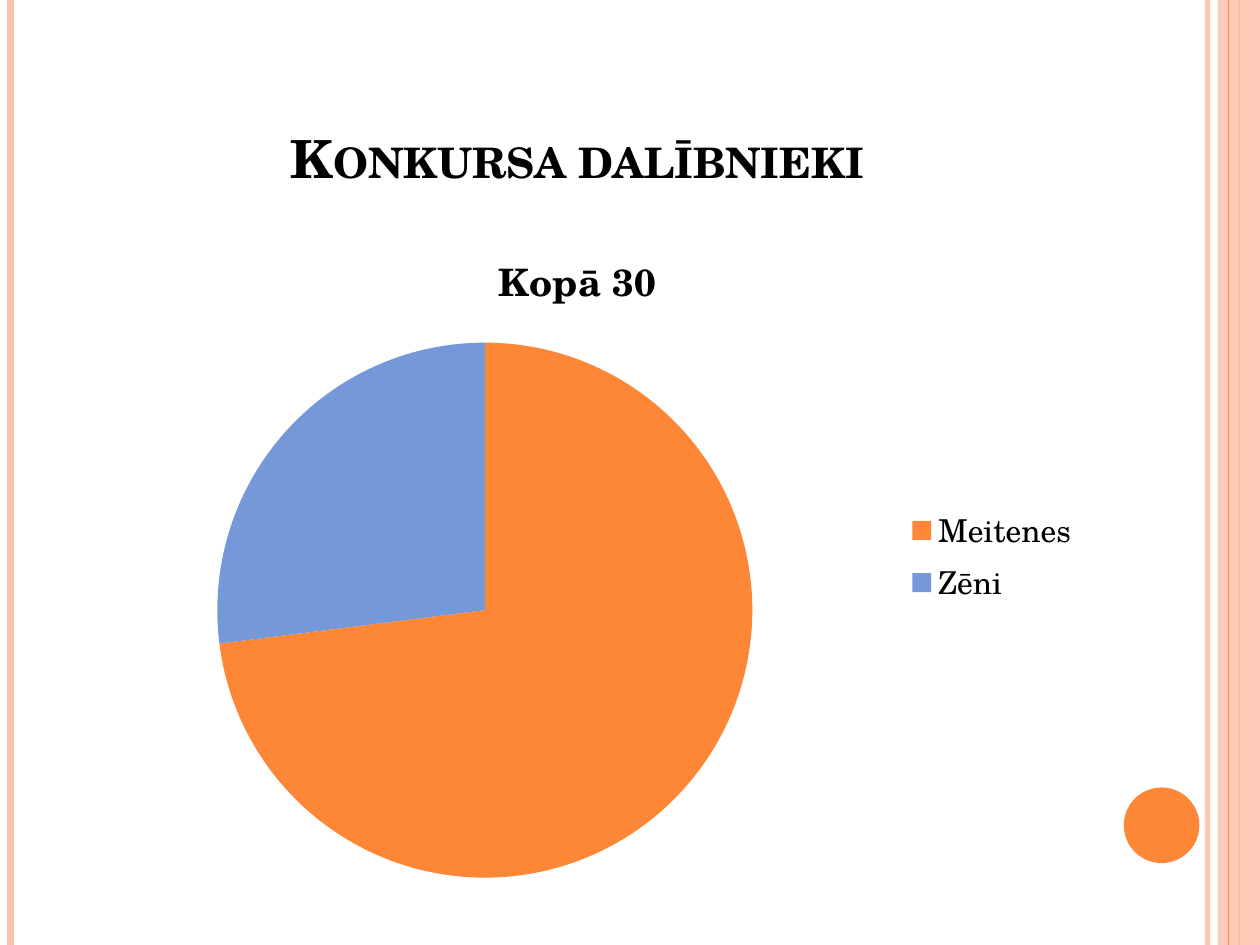
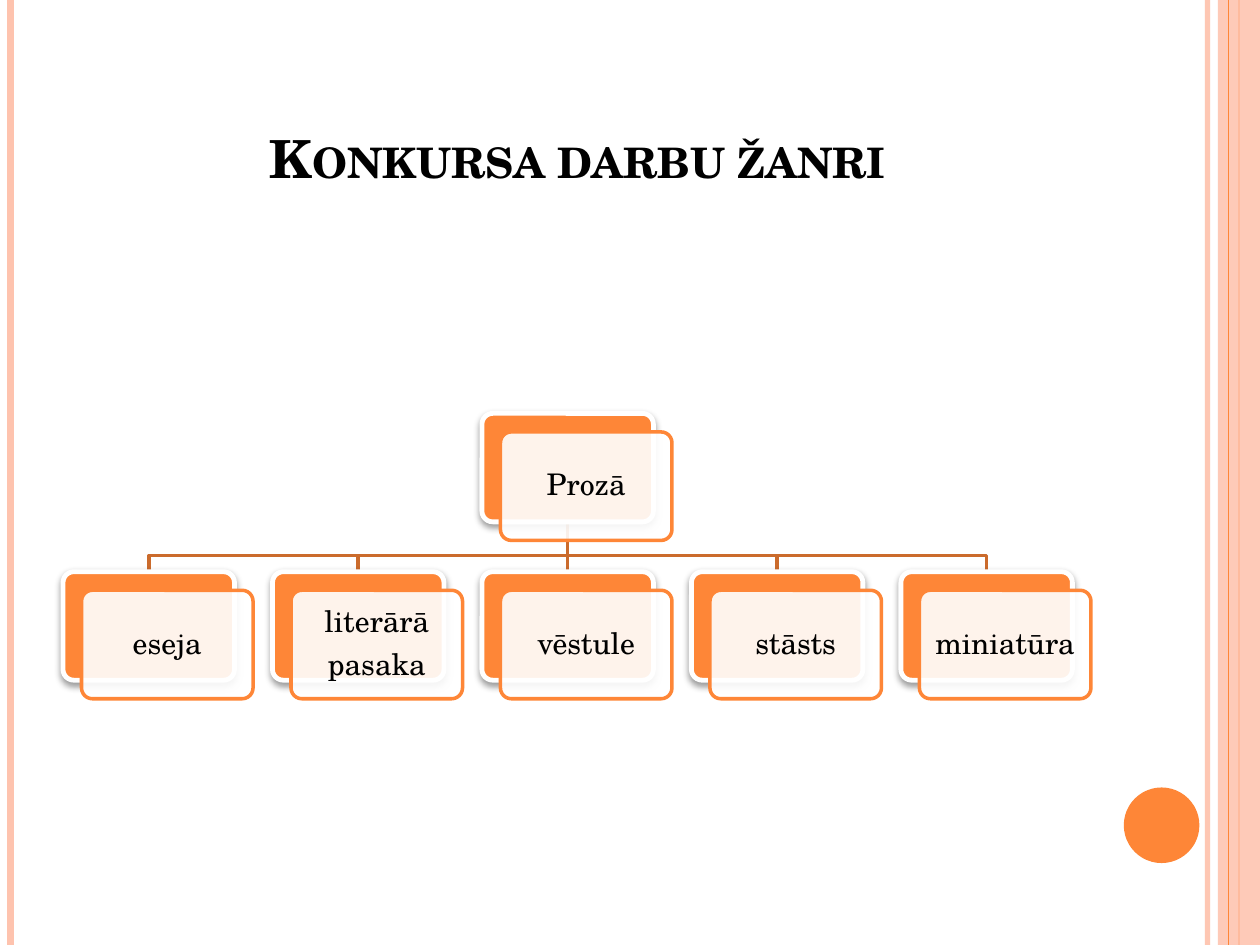
from typing import NamedTuple

from lxml import etree
from pptx import Presentation
from pptx.chart.data import CategoryChartData
from pptx.dml.color import RGBColor
from pptx.enum.chart import XL_CHART_TYPE as ChartType, XL_LEGEND_POSITION as LegendPosition
from pptx.enum.shapes import MSO_CONNECTOR as Connector, MSO_SHAPE as Shape
from pptx.enum.text import MSO_ANCHOR as Anchor, MSO_AUTO_SIZE as AutoSize, PP_ALIGN as Align
from pptx.oxml import parse_xml
from pptx.oxml.ns import nsdecls, qn
from pptx.util import Pt

FONT = "TeX Gyre Schola"
COLORS = {
    "black": "000000",
    "white": "FFFFFF",
    "orange": "FE8637",
    "peach": "FEC3AE",
    "blue": "7598D9",
    "branch": "CB6B2C",
}
SLIDE_WIDTH, SLIDE_HEIGHT = 720, 540
TITLE_ONLY = 5
CONTENT_LEFT, CONTENT_WIDTH = 36, 588


class Stripe(NamedTuple):
    x: float
    color: str
    weight: float
    opacity: int = 100


STRIPES_BEHIND = [
    Stripe(690, "peach", 3, 93),
    Stripe(6, "peach", 4.5),
    Stripe(708, "orange", 1.5),
]
STRIPE_ON_BAND = Stripe(702, "orange", 0.75)


class Card(NamedTuple):
    text: str
    left: float
    top: float

    @property
    def center(self) -> float:
        return self.left + CARD_WIDTH / 2


CARD_WIDTH, CARD_HEIGHT = 98, 62
CARD_STEP = 119.7
FRONT_SHIFT = 10.6
ROOT_TOP, GENRE_TOP = 236.2, 326.7
BRANCH_Y = 317.5
GENRES = ["eseja", "literārā\npasaka", "vēstule", "stāsts", "miniatūra"]


def rgb(name: str) -> RGBColor:
    return RGBColor.from_string(COLORS[name])


def set_opacity(shape, percent: int) -> None:
    """Apply opacity to the first solid colour of a shape or line."""
    color = shape._element.spPr.find(".//" + qn("a:srgbClr"))
    etree.SubElement(color, qn("a:alpha"), val=str(percent * 1000))


def write(frame, text: str, *, size: float, bold: bool = False, small_caps: bool = False,
          anchor=Anchor.MIDDLE, line_spacing: float | None = None,
          space_after: float = 0, inset: float | None = None) -> None:
    frame.word_wrap = True
    frame.auto_size = AutoSize.NONE
    frame.vertical_anchor = anchor
    if inset is not None:
        frame.margin_left = frame.margin_right = Pt(inset)
        frame.margin_top = frame.margin_bottom = Pt(inset)
    frame.text = text
    for paragraph in frame.paragraphs:
        paragraph.alignment = Align.CENTER
        paragraph.space_after = Pt(space_after)
        if line_spacing:
            paragraph.line_spacing = line_spacing
        for run in paragraph.runs:
            run.font.name = FONT
            run.font.size = Pt(size)
            run.font.bold = bold
            run.font.color.rgb = rgb("black")
            if small_caps:
                run._r.get_or_add_rPr().set("cap", "small")


def add_line(slide, start: tuple, end: tuple, color: str, weight: float):
    line = slide.shapes.add_connector(Connector.STRAIGHT, *map(Pt, start + end))
    line.line.color.rgb = rgb(color)
    line.line.width = Pt(weight)
    etree.SubElement(line._element.spPr, qn("a:effectLst"))
    return line


def add_stripe(slide, stripe: Stripe) -> None:
    line = add_line(slide, (stripe.x, 0), (stripe.x, SLIDE_HEIGHT), stripe.color, stripe.weight)
    if stripe.opacity < 100:
        set_opacity(line, stripe.opacity)


def add_filled(slide, kind, left: float, top: float, width: float, height: float,
               fill: str, outline: str | None = None, weight: float = 0):
    shape = slide.shapes.add_shape(kind, *map(Pt, (left, top, width, height)))
    shape.shadow.inherit = False
    shape.fill.solid()
    shape.fill.fore_color.rgb = rgb(fill)
    if outline:
        shape.line.color.rgb = rgb(outline)
        shape.line.width = Pt(weight)
    else:
        shape.line.fill.background()
    return shape


def add_titled_slide(deck, heading: str):
    slide = deck.slides.add_slide(deck.slide_layouts[TITLE_ONLY])
    for stripe in STRIPES_BEHIND:
        add_stripe(slide, stripe)
    band = add_filled(slide, Shape.RECTANGLE, 696, 0, 24, SLIDE_HEIGHT, "peach")
    set_opacity(band, 87)
    add_stripe(slide, STRIPE_ON_BAND)
    add_filled(slide, Shape.OVAL, 642.2, 450, 43.2, 43.2, "orange")

    title = slide.shapes.title
    title.left, title.top = Pt(CONTENT_LEFT), Pt(21.6)
    title.width, title.height = Pt(CONTENT_WIDTH), Pt(90)
    write(title.text_frame, heading, size=30, bold=True, small_caps=True, anchor=Anchor.BOTTOM)
    return slide


def place_plot(chart, **fractions: float) -> None:
    """Fix the inner plot area; x, y, w and h are fractions of the chart."""
    plot_area = chart._chartSpace.chart.plotArea
    for old in plot_area.findall(qn("c:layout")):
        plot_area.remove(old)
    places = "".join(f'<c:{key} val="{value}"/>' for key, value in fractions.items())
    plot_area.insert(0, parse_xml(
        f'<c:layout {nsdecls("c")}><c:manualLayout><c:layoutTarget val="inner"/>'
        f'<c:xMode val="edge"/><c:yMode val="edge"/>{places}</c:manualLayout></c:layout>'))


def add_participants_pie(slide) -> None:
    shares = CategoryChartData()
    shares.categories = ["Meitenes", "Zēni"]
    shares.add_series("Kopā 30", (73, 27))
    chart = slide.shapes.add_chart(
        ChartType.PIE, Pt(CONTENT_LEFT), Pt(126), Pt(CONTENT_WIDTH), Pt(384), shares).chart
    chart.font.name = FONT
    chart.font.size = Pt(18)
    chart.font.color.rgb = rgb("black")

    chart.has_title = True
    write(chart.chart_title.text_frame, "Kopā 30", size=21.6, bold=True)
    chart.has_legend = True
    chart.legend.position = LegendPosition.RIGHT
    chart.legend.include_in_layout = False

    pie = chart.plots[0]
    pie.vary_by_categories = True
    for index, color in enumerate(("orange", "blue")):
        wedge = pie.series[0].points[index].format
        wedge.fill.solid()
        wedge.fill.fore_color.rgb = rgb(color)
        wedge.line.fill.background()
    place_plot(chart, x=0.15, y=0.18, w=0.52, h=0.8)


def add_branch(slide, parent: Card, child: Card) -> None:
    start = (parent.center, parent.top + CARD_HEIGHT)
    end = (child.center, child.top)
    if parent.center == child.center:
        add_line(slide, start, end, "branch", 2)
        return
    corners = [(parent.center, BRANCH_Y), (child.center, BRANCH_Y), end]
    builder = slide.shapes.build_freeform(*map(Pt, start))
    builder.add_line_segments([(Pt(x), Pt(y)) for x, y in corners], close=False)
    branch = builder.convert_to_shape()
    branch.shadow.inherit = False
    branch.fill.background()
    branch.line.color.rgb = rgb("branch")
    branch.line.width = Pt(2)


def add_soft_shadow(shape) -> None:
    effects = shape._element.spPr.find(qn("a:effectLst"))
    effects.append(parse_xml(
        f'<a:outerShdw {nsdecls("a")} blurRad="{Pt(4)}" dist="{Pt(2)}" dir="5400000" '
        f'rotWithShape="0"><a:srgbClr val="{COLORS["black"]}"><a:alpha val="40000"/>'
        '</a:srgbClr></a:outerShdw>'))


def add_card(slide, card: Card) -> None:
    """Draw an orange backing card with a translucent text card shifted over it."""
    size = (CARD_WIDTH, CARD_HEIGHT)
    back = add_filled(slide, Shape.ROUNDED_RECTANGLE, card.left, card.top, *size,
                      "orange", "white", 2.75)
    add_soft_shadow(back)
    front = add_filled(slide, Shape.ROUNDED_RECTANGLE, card.left + FRONT_SHIFT,
                       card.top + FRONT_SHIFT, *size, "white", "orange", 2)
    set_opacity(front, 90)
    for layer in (back, front):
        layer.adjustments[0] = 0.1
    write(front.text_frame, card.text, size=17, line_spacing=0.9, space_after=6, inset=5)


def add_genre_tree(slide) -> None:
    genres = [Card(name, CONTENT_LEFT + i * CARD_STEP, GENRE_TOP)
              for i, name in enumerate(GENRES)]
    root = Card("Prozā", genres[len(genres) // 2].left, ROOT_TOP)
    for genre in reversed(genres):
        add_branch(slide, root, genre)
    for card in [root, *genres]:
        add_card(slide, card)


def main() -> None:
    deck = Presentation()
    deck.slide_width, deck.slide_height = Pt(SLIDE_WIDTH), Pt(SLIDE_HEIGHT)
    add_participants_pie(add_titled_slide(deck, "Konkursa dalībnieki"))
    add_genre_tree(add_titled_slide(deck, "Konkursa darbu žanri"))
    deck.save("out.pptx")


if __name__ == "__main__":
    main()
